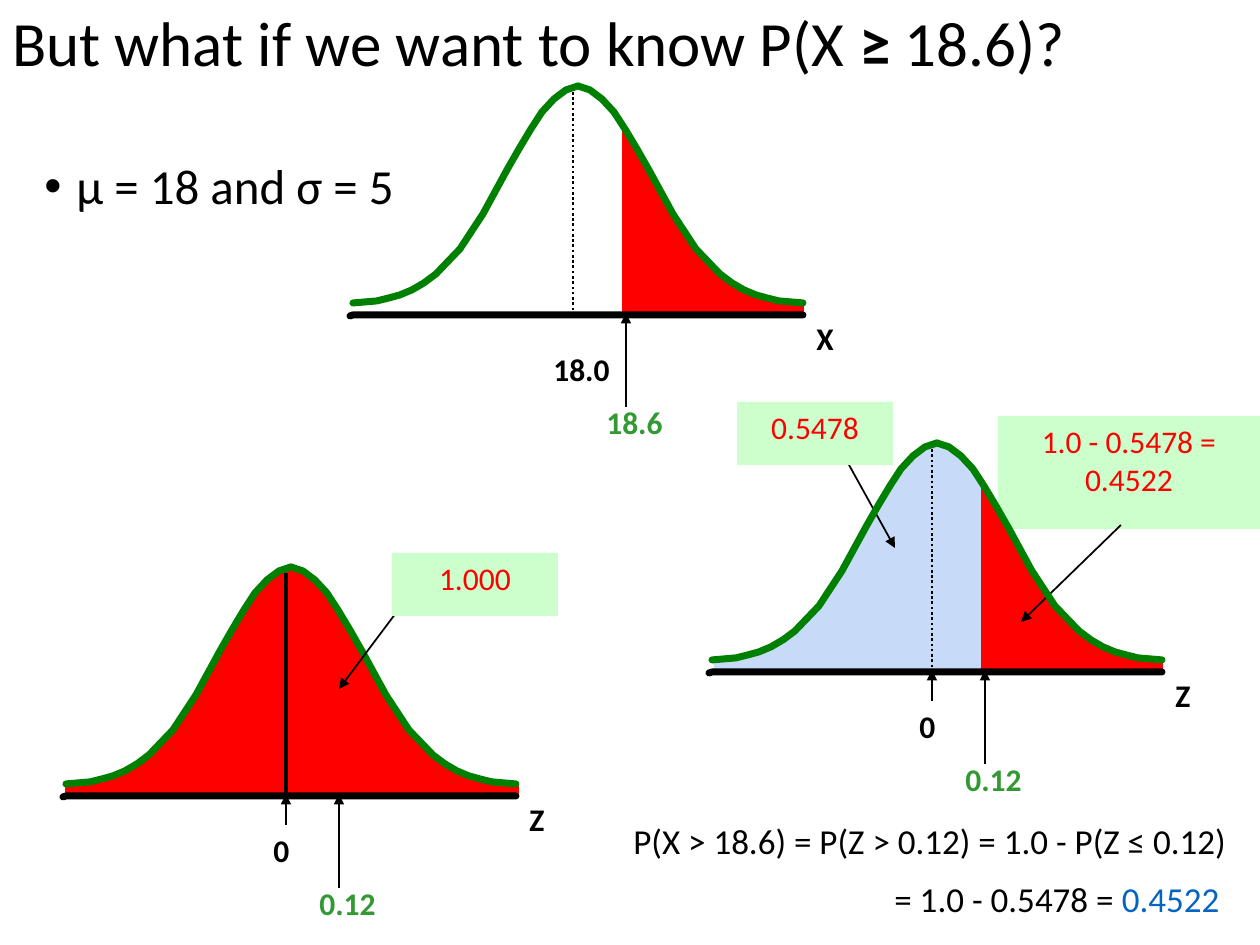
from dataclasses import dataclass, field

from lxml import etree
from pptx import Presentation
from pptx import util as u
from pptx.dml.color import RGBColor
from pptx.enum import dml, shapes, text
from pptx.oxml import ns

SCALE = 914400 / 126  # EMU per px
FONT = "Calibri"
COLORS = {"black": "000000", "red": "FF0000", "green": "008000", "value": "339933",
          "mint": "CCFFCC", "blue": "C7DAF7", "result": "0563C1"}
Point = tuple[int, int]

# Right half of the bell, measured from its peak
BELL_STEPS = [0, 1, 2, 3, 4, 5, 6, 8, 10, 12, 13, 14, 15, 16, 17, 19]
BELL_DROPS = [0, 4, 13, 26, 43, 63, 84, 128, 163, 188, 197, 204, 209, 212, 215, 217]
HALF_WIDTH = 225
AXIS_DROP = 229
MEAN_X, VALUE_X = -5, 48

# Shaded regions, measured from the peak
TAIL = [(45, 229), (45, 37), (50, 52), (63, 71), (71, 88), (79, 101), (88, 120),
        (105, 145), (118, 164), (141, 188), (178, 209), (225, 217), (225, 229)]
LEFT_HALF = [(-5, 227), (-5, 4), (-23, 10), (-45, 40), (-64, 73), (-83, 103), (-93, 123),
             (-108, 149), (-122, 168), (-144, 190), (-179, 210), (-225, 217), (-225, 227)]
RIGHT_HALF = [(-5, 227), (-4, 3), (14, 5), (43, 35), (60, 68), (78, 101), (89, 121),
              (105, 145), (120, 164), (142, 188), (179, 209), (227, 217), (227, 228)]
BELOW_MEAN = [(0, 228), (-1, 0), (-18, 6), (-44, 38), (-64, 73), (-81, 103), (-93, 126),
              (-111, 151), (-130, 173), (-149, 193), (-185, 212), (-224, 218), (-222, 229)]
MEAN_TO_VALUE = [(-3, 228), (-3, 1), (19, 10), (29, 21), (38, 32), (44, 43), (45, 228)]


@dataclass
class Area:
    points: list[Point]
    color: str
    outlined: bool = True


@dataclass
class Bell:
    peak: Point
    axis: str
    mean: str
    value: str
    areas: list[Area] = field(default_factory=list)
    mean_dotted: bool = True
    mean_arrow: bool = True
    mean_label: tuple[int, int] = (-30, 45)  # left, width

    def place(self, points: list[Point]) -> list[Point]:
        return [(self.peak[0] + x, self.peak[1] + y) for x, y in points]


@dataclass
class Callout:
    words: str
    box: tuple[int, int, int, int]


def px(length: int) -> u.Emu:
    return u.Emu(round(length * SCALE))


def rgb(name: str) -> RGBColor:
    return RGBColor.from_string(COLORS[name])


def add_text(shape, words, *, size=18, color="black", bold=False, align=None,
             first=True, before=0, spacing=None, indent=0, bullet=False):
    """Add one paragraph; words is a string or a list of (string, overrides)."""
    frame = shape.text_frame
    frame.word_wrap = True
    paragraph = frame.paragraphs[0] if first else frame.add_paragraph()
    paragraph.alignment = align or text.PP_ALIGN.LEFT
    paragraph.space_before = u.Pt(before)
    if spacing:
        paragraph.line_spacing = spacing
    properties = paragraph._p.get_or_add_pPr()
    if indent:
        properties.set("marL", str(px(indent)))
    if bullet:
        properties.set("indent", str(-px(indent)))
        etree.SubElement(properties, ns.qn("a:buFont")).set("typeface", "Arial")
        etree.SubElement(properties, ns.qn("a:buChar")).set("char", "•")
    for part, changes in ([(words, {})] if isinstance(words, str) else words):
        run = paragraph.add_run()
        run.text = part
        run.font.name = FONT
        run.font.size = u.Pt(size)
        run.font.bold = changes.get("bold", bold)
        run.font.color.rgb = rgb(changes.get("color", color))


def add_box(slide, left: int, top: int, width: int, height: int):
    return slide.shapes.add_textbox(px(left), px(top), px(width), px(height))


def add_path(slide, points: list[Point], *, fill=None, line=None, width=1.0) -> None:
    builder = slide.shapes.build_freeform(*points[0], scale=SCALE)
    builder.add_line_segments(points[1:], close=fill is not None)
    shape = builder.convert_to_shape()
    shape.shadow.inherit = False
    if fill:
        shape.fill.solid()
        shape.fill.fore_color.rgb = rgb(fill)
    else:
        shape.fill.background()
    if not line:
        shape.line.fill.background()
        return
    shape.line.color.rgb = rgb(line)
    shape.line.width = u.Pt(width)
    outline = shape.element.spPr.find(ns.qn("a:ln"))
    outline.set("cap", "rnd")
    etree.SubElement(outline, ns.qn("a:round"))


def add_line(slide, start: Point, end: Point, *, width=1.0, dotted=False, arrow=False) -> None:
    line = slide.shapes.add_connector(shapes.MSO_CONNECTOR.STRAIGHT,
                                      *(px(n) for n in (*start, *end)))
    line.line.color.rgb = rgb("black")
    line.line.width = u.Pt(width)
    if dotted:
        line.line.dash_style = dml.MSO_LINE.ROUND_DOT
    properties = line.element.spPr
    if arrow:
        outline = properties.find(ns.qn("a:ln"))
        etree.SubElement(outline, ns.qn("a:tailEnd")).set("type", "triangle")
    etree.SubElement(properties, ns.qn("a:effectLst"))


def draw_callout(slide, callout: Callout) -> None:
    shape = slide.shapes.add_shape(shapes.MSO_SHAPE.RECTANGLE, *(px(n) for n in callout.box))
    shape.shadow.inherit = False
    shape.fill.solid()
    shape.fill.fore_color.rgb = rgb("mint")
    shape.line.fill.background()
    shape.text_frame.vertical_anchor = text.MSO_ANCHOR.TOP
    add_text(shape, callout.words, color="red", align=text.PP_ALIGN.CENTER, before=9)


def draw_areas(slide, bell: Bell) -> None:
    for area in bell.areas:
        add_path(slide, bell.place(area.points), fill=area.color,
                 line=area.color if area.outlined else None)


def draw_bell(slide, bell: Bell) -> None:
    # Mean line, curve and axis
    add_line(slide, *bell.place([(MEAN_X, 6), (MEAN_X, 227)]),
             width=1.5 if bell.mean_dotted else 2.5, dotted=bell.mean_dotted)
    for side in (1, -1):
        half = [(side * round(step * HALF_WIDTH / BELL_STEPS[-1]), drop)
                for step, drop in zip(BELL_STEPS, BELL_DROPS)]
        add_path(slide, bell.place(half), line="green", width=4)
    axis = [(-228, AXIS_DROP + 1), (-HALF_WIDTH, AXIS_DROP), (HALF_WIDTH, AXIS_DROP)]
    add_path(slide, bell.place(axis), line="black", width=4)
    # Labels and the arrows to the axis
    mean_left, mean_width = bell.mean_label
    for words, left, top, width, color in ((bell.axis, 226, 227, 53, "black"),
                                           (bell.value, 16, 311, 87, "value"),
                                           (bell.mean, mean_left, 258, mean_width, "black")):
        [(x, y)] = bell.place([(left, top)])
        add_text(add_box(slide, x, y, width, 50), words, color=color, bold=True)
    add_line(slide, *bell.place([(VALUE_X, 321), (VALUE_X, 227)]), arrow=True)
    if bell.mean_arrow:
        add_line(slide, *bell.place([(MEAN_X, 258), (MEAN_X, 227)]), arrow=True)


def main() -> None:
    presentation = Presentation()
    presentation.slide_width, presentation.slide_height = px(1260), px(945)
    slide = presentation.slides.add_slide(presentation.slide_layouts[6])

    raw = Bell((578, 86), "X", "18.0", "18.6", [Area(TAIL, "red")],
               mean_arrow=False, mean_label=(-37, 87))
    whole = Bell((291, 567), "Z", "0", "0.12",
                 [Area(LEFT_HALF, "red"), Area(RIGHT_HALF, "red")], mean_dotted=False)
    split = Bell((937, 443), "Z", "0", "0.12",
                 [Area(MEAN_TO_VALUE, "blue", False), Area(BELOW_MEAN, "blue", False),
                  Area(TAIL, "red")])

    # The tail callout lies behind the curve
    draw_callout(slide, Callout("1.0 - 0.5478 = 0.4522", (998, 416, 262, 113)))

    # Title and parameters
    title = add_box(slide, 0, 0, 1200, 93)
    title.text_frame.vertical_anchor = text.MSO_ANCHOR.MIDDLE
    add_text(title, [("But what if we want to know P(X ", {}), ("≥", {"bold": True}),
                     (" 18.6)?", {})], size=36, spacing=0.9)
    add_text(add_box(slide, 32, 156, 1200, 737), "μ = 18 and σ = 5", size=28,
             before=10, spacing=0.9, indent=32, bullet=True)

    # Distribution of X
    draw_areas(slide, raw)
    draw_bell(slide, raw)

    # Z with the whole area
    draw_areas(slide, whole)
    draw_bell(slide, whole)
    add_line(slide, (402, 605), (339, 689), arrow=True)
    draw_callout(slide, Callout("1.000", (392, 553, 166, 63)))

    # Z with the area split at 0.12
    draw_areas(slide, split)
    add_line(slide, (1121, 525), (1021, 622), arrow=True)
    add_line(slide, (843, 454), (895, 548), arrow=True)
    draw_bell(slide, split)
    draw_callout(slide, Callout("0.5478", (737, 402, 156, 63)))

    # Calculation
    formula = add_box(slide, 621, 813, 639, 118)
    add_text(formula, "P(X > 18.6) = P(Z > 0.12) = 1.0 - P(Z ≤ 0.12)", size=20, before=9)
    add_text(formula, [("= 1.0 - 0.5478 = ", {}), ("0.4522", {"color": "result"})],
             size=20, before=9, first=False, indent=261)

    presentation.save("out.pptx")


if __name__ == "__main__":
    main()
